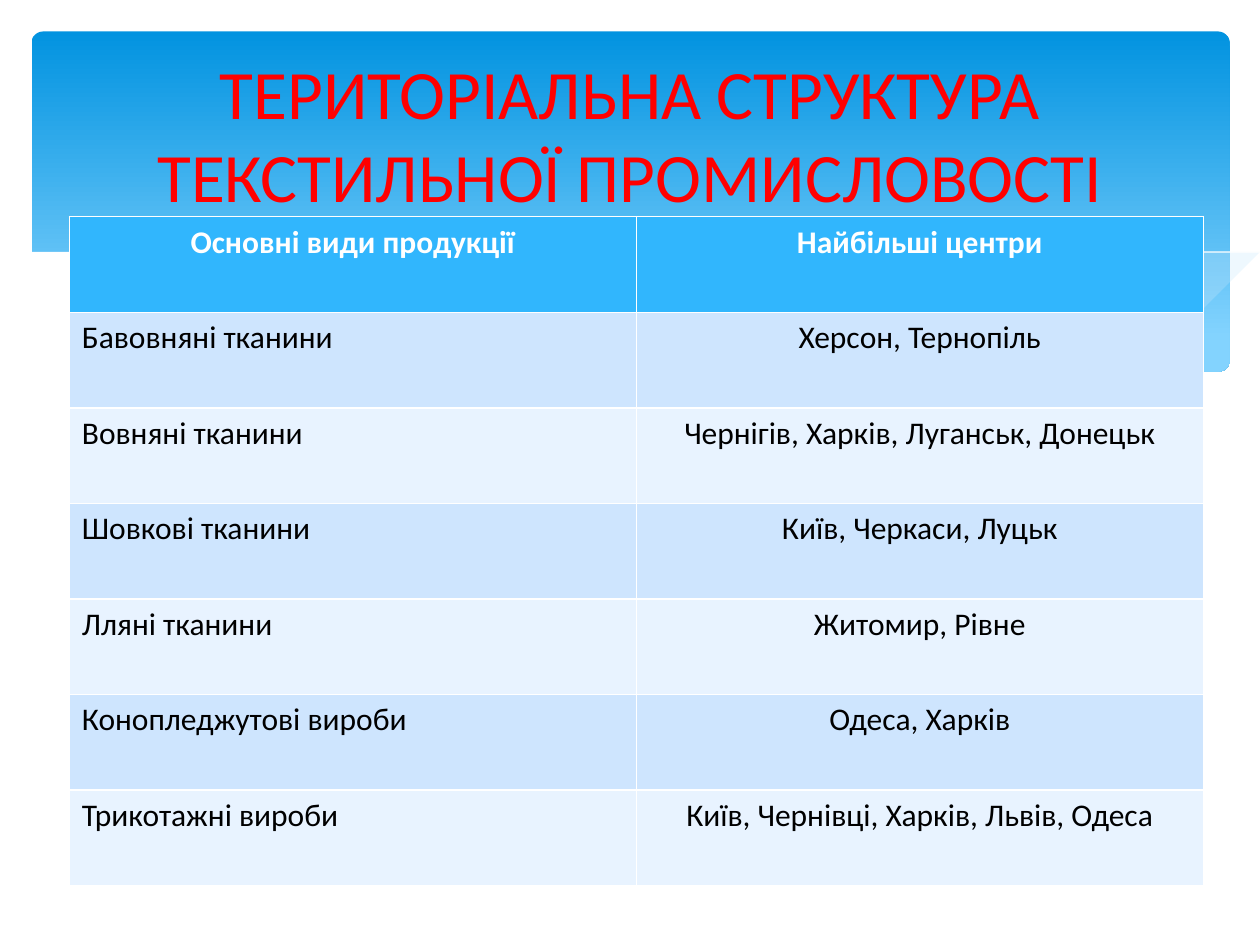
from pptx import Presentation
from pptx.dml.color import RGBColor
from pptx.enum.shapes import MSO_SHAPE
from pptx.enum.text import MSO_ANCHOR, PP_ALIGN
from pptx.oxml.ns import qn
from pptx.util import Inches, Pt
from lxml import etree

ROUNDED = MSO_SHAPE.ROUNDED_RECTANGLE
MIDDLE = MSO_ANCHOR.MIDDLE
LEFT, CENTER = PP_ALIGN.LEFT, PP_ALIGN.CENTER
TITLE_ONLY = 5
FONT = "Calibri"
HEADER_FILL = "31B6FD"
BAND_FILLS = ["E8F3FF", "CEE5FE"]

# Each wave: outline points in inches, fill colour, opacity in percent
# A wave without a fill is an open white hairline
WAVES = [
    ([(9.76, 2), (9.48, 2.04), (9.06, 2.13), (8.61, 2.23), (8.05, 2.37),
      (7.53, 2.48), (7.06, 2.57), (6.61, 2.65), (7.05, 2.71), (7.45, 2.75),
      (8.03, 2.78), (8.54, 2.76), (8.97, 2.7), (9.35, 2.62), (9.76, 2.47)],
     "C6E7FC", 29),
    ([(8.93, 2.73), (8.37, 2.65), (7.75, 2.54), (7.06, 2.4), (6.29, 2.22),
      (5.69, 2.08), (5.14, 1.98), (4.65, 1.91), (4.2, 1.87), (3.8, 1.85),
      (3.44, 1.86), (2.86, 1.91), (3.42, 1.99), (4.04, 2.11), (4.91, 2.32),
      (5.66, 2.48), (6.34, 2.61), (6.95, 2.7), (7.48, 2.76), (7.96, 2.78),
      (8.48, 2.77)],
     "C6E7FC", 40),
    ([(3.09, 1.95), (3.44, 1.9), (3.87, 1.87), (4.33, 1.87), (4.89, 1.9),
      (5.56, 1.97), (6.36, 2.08), (6.95, 2.19), (7.6, 2.33), (8.31, 2.51),
      (9.07, 2.72)],
     None, 100),
    ([(6.13, 2.57), (6.53, 2.46), (6.95, 2.35), (7.48, 2.23), (8.06, 2.1),
      (8.66, 1.99), (9.1, 1.92), (9.51, 1.87), (9.75, 1.85)],
     None, 100),
    ([(9.77, 2.46), (9.5, 2.56), (9.2, 2.65), (8.87, 2.71), (8.5, 2.75),
      (8.09, 2.77), (7.61, 2.75), (7.08, 2.7), (6.48, 2.62), (5.79, 2.5),
      (5.03, 2.33), (4.47, 2.2), (3.91, 2.07), (3.4, 1.97), (2.92, 1.9),
      (2.5, 1.86), (2.11, 1.84), (1.77, 1.84), (1.32, 1.86), (0.95, 1.91),
      (0.67, 1.97), (0.46, 2.03), (0.23, 2.13), (0.23, 3.29), (9.77, 3.29)],
     "FFFFFF", 100),
]

ROWS = [
    ("Основні види продукції", "Найбільші центри"),
    ("Бавовняні тканини", "Херсон, Тернопіль"),
    ("Вовняні тканини", "Чернігів, Харків, Луганськ, Донецьк"),
    ("Шовкові тканини", "Київ, Черкаси, Луцьк"),
    ("Лляні тканини", "Житомир, Рівне"),
    ("Конопледжутові вироби", "Одеса, Харків"),
    ("Трикотажні вироби", "Київ, Чернівці, Харків, Львів, Одеса"),
]


def color(value):
    return RGBColor.from_string(value)


def format_paragraph(paragraph, alignment, text_color, **font_values):
    paragraph.alignment = alignment
    paragraph.font.color.rgb = color(text_color)
    for name, value in {"name": FONT, **font_values}.items():
        setattr(paragraph.font, name, value)


presentation = Presentation()
presentation.slide_width = Inches(10)
presentation.slide_height = Inches(7.5)
slide = presentation.slides.add_slide(presentation.slide_layouts[TITLE_ONLY])
shapes = slide.shapes

# Gradient banner
banner = shapes.add_shape(ROUNDED, Inches(0.25), Inches(0.25), Inches(9.51), Inches(2.7))
banner.adjustments[0] = 0.034
banner.shadow.inherit = False
banner.line.fill.background()
banner.fill.gradient()
banner.fill.gradient_angle = 270
for stop, position, value in zip(banner.fill.gradient_stops, (0, 0.9), ("0293E0", "83D3FE")):
    stop.position = position
    stop.color.rgb = color(value)

# Waves along the lower edge of the banner
for points, fill, opacity in WAVES:
    builder = shapes.build_freeform(*points[0], scale=Inches(1))
    builder.add_line_segments(points[1:], close=fill is not None)
    wave = builder.convert_to_shape()
    wave.shadow.inherit = False
    if fill is None:
        wave.fill.background()
        wave.line.color.rgb = color("FFFFFF")
        wave.line.width = Pt(0)
        continue
    wave.line.fill.background()
    wave.fill.solid()
    wave.fill.fore_color.rgb = color(fill)
    if opacity < 100:
        fill_color = wave._element.spPr.find(qn("a:solidFill")).find(qn("a:srgbClr"))
        etree.SubElement(fill_color, qn("a:alpha"), val=str(opacity * 1000))

# Table of products and centres
table = shapes.add_table(len(ROWS), 2, Inches(0.55), Inches(1.72), Inches(9), Inches(5.31)).table
for row_index, row in enumerate(ROWS):
    is_header = row_index == 0
    for column_index, text in enumerate(row):
        cell = table.cell(row_index, column_index)
        cell.text = text
        cell.fill.solid()
        cell.fill.fore_color.rgb = color(HEADER_FILL if is_header else BAND_FILLS[row_index % 2])
        format_paragraph(
            cell.text_frame.paragraphs[0],
            CENTER if is_header or column_index == 1 else LEFT,
            "FFFFFF" if is_header else "000000",
            size=Pt(18), bold=is_header,
        )

# Title, in front of the table
title = shapes.title
title_box = {"left": 0.5, "top": 0.37, "width": 9, "height": 1.37}
for name, value in title_box.items():
    setattr(title, name, Inches(value))
title.text_frame.text = "ТЕРИТОРІАЛЬНА СТРУКТУРА\vТЕКСТИЛЬНОЇ ПРОМИСЛОВОСТІ"
title.text_frame.vertical_anchor = MIDDLE
format_paragraph(title.text_frame.paragraphs[0], CENTER, "FF0000", size=Pt(39.6))
shapes._spTree.append(title._element)

presentation.save("out.pptx")
